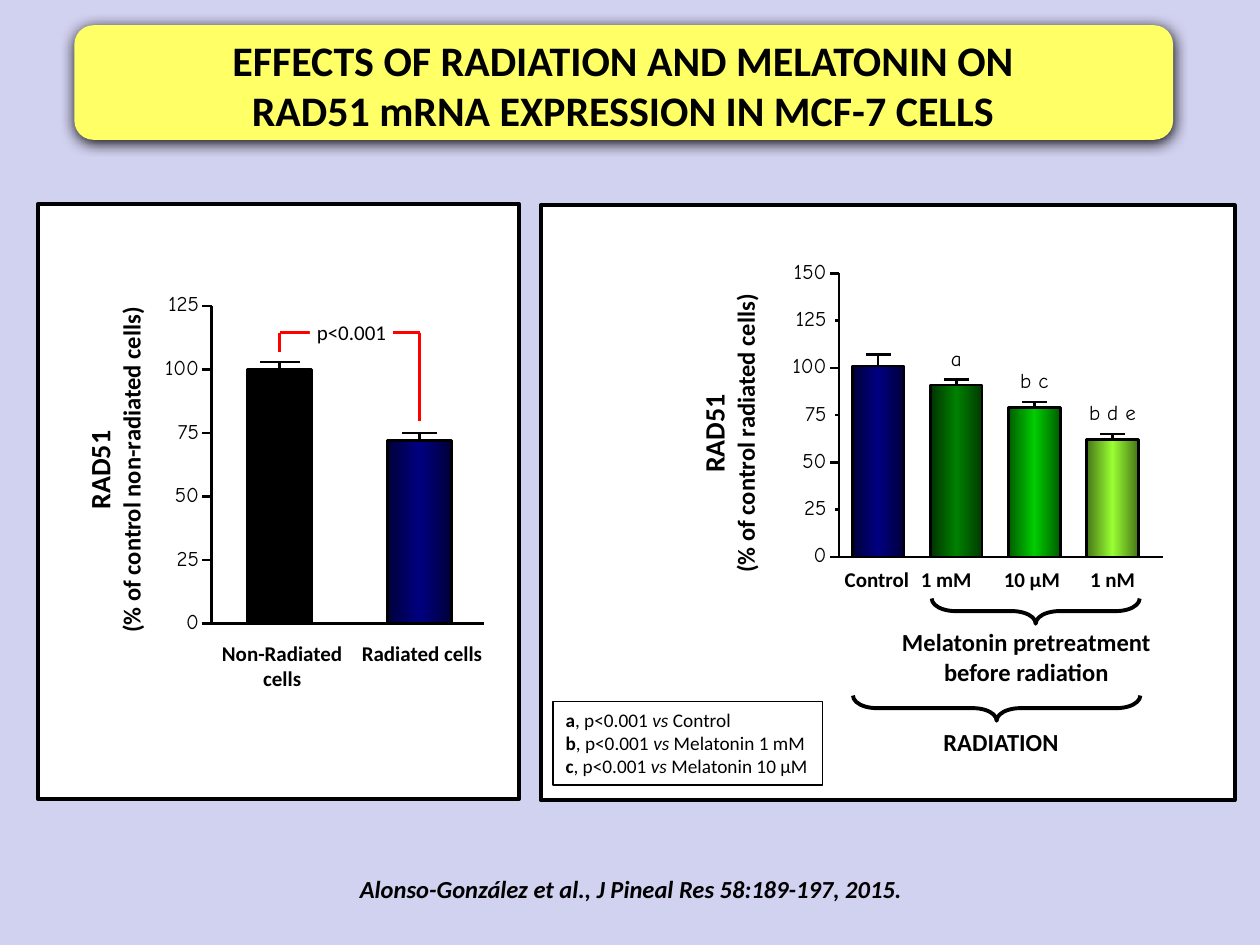
import dataclasses

import lxml.etree
import pptx
import pptx.dml.color
import pptx.enum.shapes
import pptx.enum.text
import pptx.oxml.ns
import pptx.util

Inches = pptx.util.Inches
Shapes = pptx.enum.shapes.MSO_SHAPE
Align = pptx.enum.text.PP_ALIGN
Anchor = pptx.enum.text.MSO_ANCHOR
qn = pptx.oxml.ns.qn


@dataclasses.dataclass(frozen=True)
class Theme:
    background: str = "D1D1F0"
    banner: str = "FFFF66"
    panel: str = "FFFFFF"
    ink: str = "000000"
    accent: str = "FF0000"
    navy: tuple = ("00003B", "000080", "00003B")
    forest: tuple = ("003300", "008000", "003B00")
    green: tuple = ("005E00", "00CC00", "005E00")
    lime: tuple = ("477618", "99FF33", "477618")
    text_font: str = "Calibri"
    axis_font: str = "Comic Neue"
    title_size: int = 24
    axis_title_size: int = 16
    heading_size: int = 14
    label_size: int = 12
    legend_size: int = 11


@dataclasses.dataclass(frozen=True)
class Box:
    left: float
    top: float
    width: float
    height: float

    def inside(self, left, top, width, height):
        return Box(self.left + left, self.top + top, width, height)

    def lengths(self):
        return [Inches(value) for value in (self.left, self.top, self.width, self.height)]


@dataclasses.dataclass(frozen=True)
class Axis:
    x: float
    base: float
    end: float
    maximum: int
    unit: float
    major: int
    tick: float

    def y(self, value):
        return self.base - value * self.unit


THEME = Theme()


def color(value):
    return pptx.dml.color.RGBColor.from_string(value)


def add_run(paragraph, text, size, bold=False, italic=False, font=THEME.text_font):
    run = paragraph.add_run()
    run.text = text
    run.font.name = font
    run.font.size = pptx.util.Pt(size)
    run.font.bold = bold
    run.font.italic = italic
    run.font.color.rgb = color(THEME.ink)


def write(shape, lines, align=Align.CENTER, inset=None, wrap=True, anchor=Anchor.TOP):
    frame = shape.text_frame
    frame.word_wrap = wrap
    frame.vertical_anchor = anchor
    frame.auto_size = pptx.enum.text.MSO_AUTO_SIZE.NONE
    if inset is not None:
        frame.margin_left = frame.margin_right = Inches(inset)
        frame.margin_top = frame.margin_bottom = Inches(inset)
    for index, runs in enumerate(lines):
        paragraph = frame.add_paragraph() if index else frame.paragraphs[0]
        paragraph.alignment = align
        for run in runs:
            add_run(paragraph, **run)


def add_text(slide, box, lines, **options):
    shape = slide.shapes.add_textbox(*box.lengths())
    write(shape, lines, **options)
    return shape


def add_label(slide, box, text, size=THEME.label_size, bold=True, italic=False,
              font=THEME.text_font, **options):
    run = dict(text=text, size=size, bold=bold, italic=italic, font=font)
    return add_text(slide, box, [[run]], **options)


def add_block(slide, kind, box, fill=None, line_width=None):
    shape = slide.shapes.add_shape(kind, *box.lengths())
    shape.shadow.inherit = False
    if fill is None:
        shape.fill.background()
    elif isinstance(fill, tuple):
        shape.fill.gradient()
        shape.fill.gradient_angle = 0
        stops = shape.element.spPr.find(".//" + qn("a:gsLst"))
        for stop in list(stops):
            stops.remove(stop)
        for position, value in zip((0, 50000, 100000), fill):
            stop = lxml.etree.SubElement(stops, qn("a:gs"), pos=str(position))
            lxml.etree.SubElement(stop, qn("a:srgbClr"), val=value)
    else:
        shape.fill.solid()
        shape.fill.fore_color.rgb = color(fill)
    if line_width is None:
        shape.line.fill.background()
    else:
        shape.line.color.rgb = color(THEME.ink)
        shape.line.width = pptx.util.Pt(line_width)
    return shape


def add_line(slide, start, end, line_color=THEME.ink):
    points = [Inches(value) for value in (*start, *end)]
    line = slide.shapes.add_connector(pptx.enum.shapes.MSO_CONNECTOR.STRAIGHT, *points)
    line.line.color.rgb = color(line_color)
    line.line.width = pptx.util.Pt(1.5)
    lxml.etree.SubElement(line.element.spPr, qn("a:effectLst"))
    return line


def add_axis(slide, axis):
    add_line(slide, (axis.x, axis.base), (axis.x, axis.y(axis.maximum)))
    for value in range(0, axis.maximum + 1, 25):
        y = axis.y(value)
        length = axis.tick if value % axis.major == 0 else axis.tick / 2
        add_line(slide, (axis.x, y), (axis.x - length, y))
        add_label(slide, Box(axis.x - 0.4, y - 0.12, 0.3, 0.2), str(value), bold=False,
                  font=THEME.axis_font, align=Align.RIGHT, inset=0, wrap=False)
    add_line(slide, (axis.x, axis.base), (axis.end, axis.base))


def add_axis_title(slide, box, unit):
    title = add_text(slide, box, [
        [dict(text="RAD51", size=THEME.axis_title_size, bold=True)],
        [dict(text=unit, size=THEME.heading_size, bold=True)]], inset=0)
    title.rotation = 270


def add_bar(slide, axis, center, width, value, error_top, cap, fill):
    top, cap_y = axis.y(value), axis.y(error_top)
    bar = add_block(slide, Shapes.RECTANGLE,
                    Box(center - width / 2, top, width, axis.base - top), fill, 1.5)
    add_line(slide, (center - cap / 2, cap_y), (center + cap / 2, cap_y))
    add_line(slide, (center, cap_y), (center, top)).end_connect(bar, 0)


def add_brace(slide, center_x, center_y, length):
    box = Box(center_x - 0.1, center_y - length / 2, 0.2, length)
    brace = add_block(slide, Shapes.LEFT_BRACE, box, line_width=2.25)
    brace.adjustments[0] = 0.94
    brace.rotation = 270


def add_legend(slide, box):
    legend = add_block(slide, Shapes.RECTANGLE, box, THEME.panel, 0.75)
    size = THEME.legend_size
    write(legend, [[dict(text=letter, size=size, bold=True),
                    dict(text=", p<0.001 ", size=size),
                    dict(text="vs ", size=size, italic=True),
                    dict(text=reference, size=size)]
                   for letter, reference in (("a", "Control"), ("b", "Melatonin 1 mM"),
                                             ("c", "Melatonin 10 µM"))],
          align=Align.LEFT, wrap=False)


def add_banner(slide, box):
    banner = add_block(slide, Shapes.ROUNDED_RECTANGLE, box, THEME.banner)
    effects = banner.element.spPr.find(qn("a:effectLst"))
    shadow = lxml.etree.SubElement(effects, qn("a:outerShdw"), blurRad="107950",
                                   dist="12700", dir="5400000", rotWithShape="0")
    lxml.etree.SubElement(shadow, qn("a:srgbClr"), val=THEME.ink)
    title = slide.shapes.title
    title.left, title.top, title.width, title.height = box.inside(0.81, 0.02, 7.09, 0.91).lengths()
    text = "EFFECTS OF RADIATION AND MELATONIN ON RAD51 mRNA EXPRESSION IN MCF-7 CELLS"
    write(title, [[dict(text=text, size=THEME.title_size, bold=True)]])
    banner.element.addnext(title.element)


def add_radiation_panel(slide, box):
    add_block(slide, Shapes.RECTANGLE, box, THEME.panel, 2.25)
    add_axis_title(slide, box.inside(-0.91, 1.86, 3.03, 0.5),
                   "(% of control non-radiated cells)")
    axis = Axis(box.left + 1.38, box.top + 3.33, box.left + 3.54, 125, 2.52 / 125, 25, 0.08)
    add_axis(slide, axis)
    first, second = box.left + 1.92, box.left + 3.03
    for center, value, error_top, cap, fill, label in (
            (first, 100, 103, 0.32, THEME.ink, "Non-Radiated cells"),
            (second, 72, 75, 0.28, THEME.navy, "Radiated cells")):
        add_bar(slide, axis, center, 0.51, value, error_top, cap, fill)
        add_label(slide, Box(center - 0.56, axis.base + 0.13, 1.16, 0.4), label, inset=0)
    bracket = box.top + 1.02
    for start, end in (((first, bracket), (second, bracket)),
                       ((first, bracket), (first, bracket + 0.15)),
                       ((second, bracket), (second, bracket + 0.7))):
        add_line(slide, start, end, THEME.accent)
    gap = add_block(slide, Shapes.RECTANGLE, box.inside(2.16, 0.82, 0.66, 0.4), THEME.panel)
    write(gap, [[dict(text="p<0.001", size=THEME.label_size)]], inset=0, anchor=Anchor.MIDDLE)


def add_melatonin_panel(slide, box):
    add_block(slide, Shapes.RECTANGLE, box, THEME.panel, 2.25)
    add_axis_title(slide, box.inside(0.19, 1.56, 2.6, 0.5), "(% of control radiated cells)")
    axis = Axis(box.left + 2.37, box.top + 2.79, box.left + 4.94, 150, 0.015, 50, 0.07)
    add_axis(slide, axis)
    for index, (value, error_top, fill, label, shift, letters) in enumerate((
            (101, 107, THEME.navy, "Control", -0.01, ""),
            (91, 94, THEME.forest, "1 mM", -0.08, "a"),
            (79, 82, THEME.green, "10 µM", -0.02, "b c"),
            (62, 65, THEME.lime, "1 nM", 0, "b d e"))):
        center = box.left + 2.68 + 0.62 * index
        add_bar(slide, axis, center, 0.41, value, error_top, 0.2, fill)
        add_label(slide, Box(center + shift - 0.43, axis.base + 0.03, 0.86, 0.3), label)
        if letters:
            add_label(slide, Box(center - 0.35, axis.y(error_top) - 0.32, 0.7, 0.3), letters,
                      bold=False, font=THEME.axis_font)
    add_brace(slide, box.left + 3.93, box.top + 3.22, 1.65)
    add_label(slide, box.inside(2.76, 3.3, 2.19, 0.57),
              "Melatonin pretreatment before radiation", THEME.heading_size)
    add_brace(slide, box.left + 3.62, box.top + 3.99, 2.28)
    add_label(slide, box.inside(2.56, 4.09, 2.19, 0.34), "RADIATION", THEME.heading_size)
    add_legend(slide, box.inside(0.1, 3.94, 2.14, 0.66))


def add_citation(slide, box):
    add_label(slide, box, "Alonso-González et al., J Pineal Res 58:189-197, 2015.",
              THEME.heading_size, italic=True)


def main():
    presentation = pptx.Presentation()
    presentation.slide_width, presentation.slide_height = Inches(10), Inches(7.5)
    slide = presentation.slides.add_slide(presentation.slide_layouts[5])
    slide.background.fill.solid()
    slide.background.fill.fore_color.rgb = color(THEME.background)
    add_banner(slide, Box(0.59, 0.2, 8.72, 0.91))
    add_radiation_panel(slide, Box(0.3, 1.62, 3.82, 4.72))
    add_melatonin_panel(slide, Box(4.29, 1.63, 5.51, 4.72))
    add_citation(slide, Box(1.82, 6.89, 6.38, 0.34))
    presentation.save("out.pptx")


if __name__ == "__main__":
    main()
